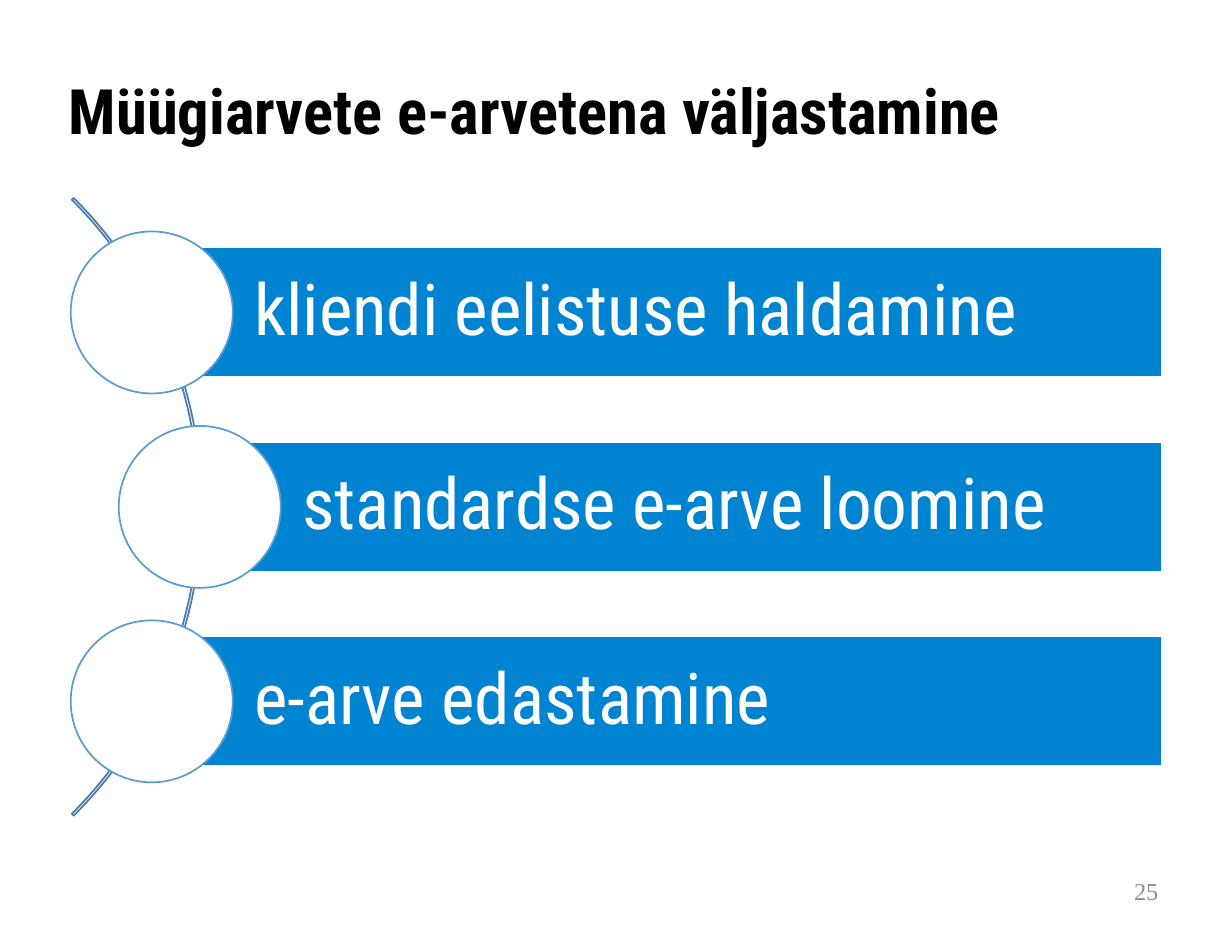
from pptx import Presentation
from pptx.dml.color import RGBColor
from pptx.enum.shapes import MSO_SHAPE as Shape
from pptx.enum.text import MSO_ANCHOR as Anchor, PP_ALIGN as Align
from pptx.util import Cm, Inches, Pt

WIDTH, HEIGHT = Cm(25), Cm(19)
COLORS = {
    "title": "000000",
    "bar": "0084D1",
    "white": "FFFFFF",
    "ring": "5B9BD5",
    "arc": "497CAB",
    "number": "8C8C8C",
}
STEPS = ["kliendi eelistuse haldamine", "standardse e-arve loomine", "e-arve edastamine"]


def share_box(left, top, width, height):
    """Turn percentages of the slide into a box in slide units."""
    return (left * WIDTH / 100, top * HEIGHT / 100,
            width * WIDTH / 100, height * HEIGHT / 100)


def write(shape, text, size, color, insets, font="Roboto Condensed", bold=False,
          spacing=0.9, align=Align.LEFT, anchor=Anchor.TOP):
    frame = shape.text_frame
    left, top, right, bottom = (Inches(inset) for inset in insets)
    frame_format = {"word_wrap": True, "vertical_anchor": anchor, "margin_left": left,
                    "margin_top": top, "margin_right": right, "margin_bottom": bottom}
    for name, value in frame_format.items():
        setattr(frame, name, value)
    para = frame.paragraphs[0]
    para.alignment, para.line_spacing = align, spacing
    span = para.add_run()
    span.text = text
    for name, value in {"name": font, "size": Pt(size), "bold": bold}.items():
        setattr(span.font, name, value)
    span.font.color.rgb = RGBColor.from_string(COLORS[color])


def add_text(page, box, text, **text_format):
    write(page.shapes.add_textbox(*map(round, box)), text, **text_format)


def add_outlined(page, kind, box, line, fill=None):
    shape = page.shapes.add_shape(kind, *map(round, box))
    shape.shadow.inherit = False
    if fill:
        shape.fill.solid()
        shape.fill.fore_color.rgb = RGBColor.from_string(COLORS[fill])
    else:
        shape.fill.background()
    shape.line.color.rgb = RGBColor.from_string(COLORS[line])
    shape.line.width = Pt(1)
    return shape


def add_curved_list(page, box, steps):
    left, top, width, height = box
    # The box is five bar heights tall, and bars repeat every one and a half
    bar = height / 5
    circle = 1.25 * bar
    middle = top + height / 2

    # Arc behind the circles
    diameter = 6.74 * bar
    arc_box = (left + 1.01 * bar - diameter, middle - diameter / 2, diameter, diameter)
    arc = add_outlined(page, Shape.BLOCK_ARC, arc_box, "arc")
    for index, value in enumerate((189, 27, 0.003)):
        arc.adjustments[index] = value

    # Bars with a circle at the left end of each
    for index, step in enumerate(steps):
        center = middle + (index - 1) * 1.5 * bar
        circle_left = left + (0.37 * bar if index == 1 else 0)
        bar_left = circle_left + circle / 2
        bar_box = (bar_left, center - bar / 2, left + width - bar_left, bar)
        label = add_outlined(page, Shape.RECTANGLE, bar_box, "white", "bar")
        write(label, step, size=41, color="white", insets=(0.82, 0.11, 0.11, 0.11),
              anchor=Anchor.MIDDLE)
        add_outlined(page, Shape.OVAL, (circle_left, center - circle / 2, circle, circle),
                     "ring", "white")


def build_steps_page(deck):
    page = deck.slides.add_slide(deck.slide_layouts[6])
    # Title
    add_text(page, share_box(5.59, 7.89, 88, 15.78), "Müügiarvete e-arvetena väljastamine",
             size=36, color="title", bold=True, spacing=0.88, insets=(0, 0.06, 0, 0))
    # Steps
    add_curved_list(page, share_box(5.74, 19.53, 88.55, 69.25), STEPS)
    # Page number
    add_text(page, share_box(71.65, 92.65, 23.37, 5.35), "25", size=14, color="number",
             font="Times New Roman", spacing=0.95, align=Align.RIGHT,
             anchor=Anchor.MIDDLE, insets=(0.1, 0.05, 0.1, 0.05))


def main():
    deck = Presentation()
    deck.slide_width, deck.slide_height = WIDTH, HEIGHT
    build_steps_page(deck)
    deck.save("out.pptx")


if __name__ == "__main__":
    main()
